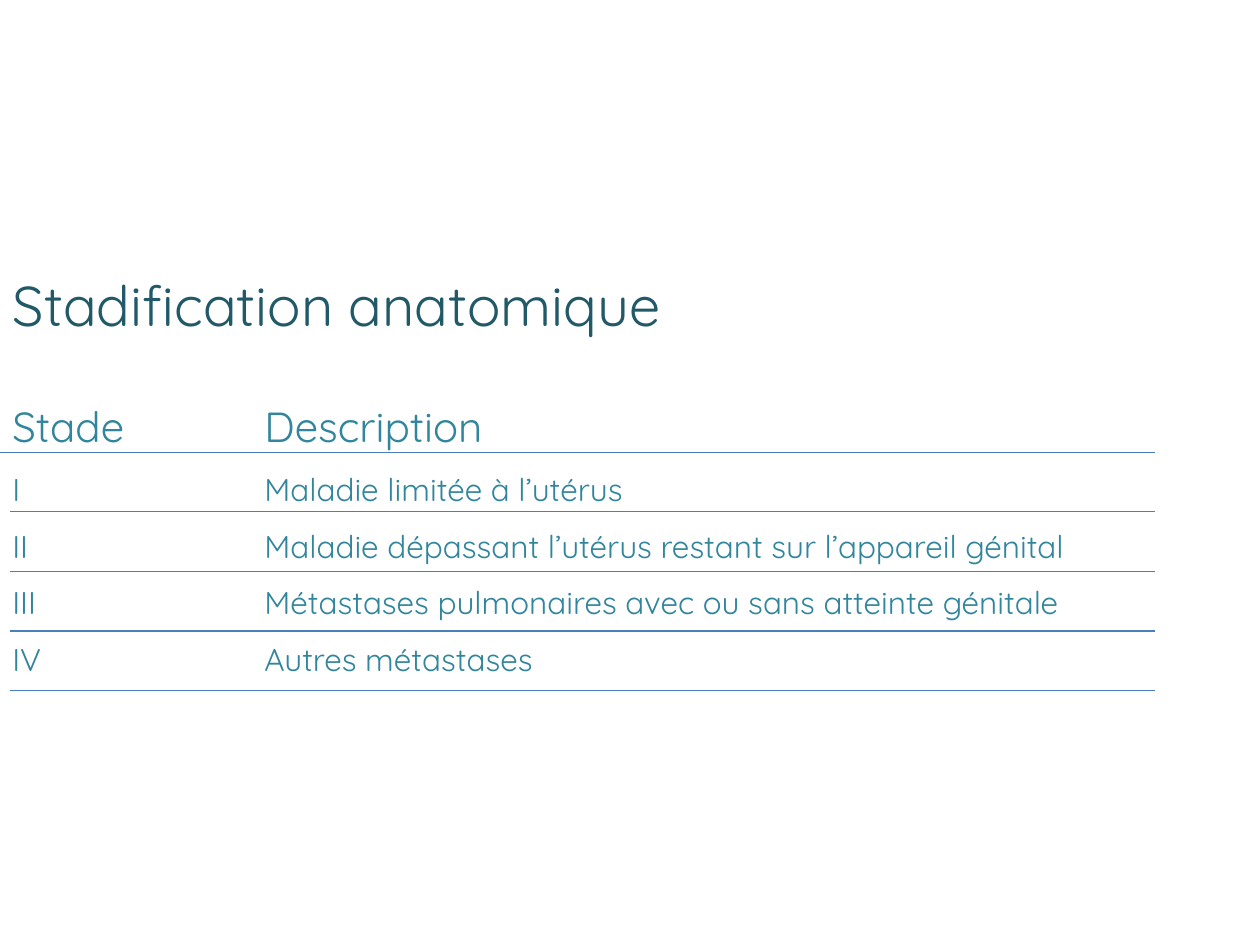
from lxml import etree
from pptx import Presentation
from pptx.dml.color import RGBColor
from pptx.enum import shapes, text
from pptx.oxml import ns
from pptx.util import Inches, Pt

DARK_TEAL = RGBColor(0x21, 0x59, 0x68)
TEAL = RGBColor(0x31, 0x85, 0x9C)
BLUE = RGBColor(0x4B, 0x7E, 0xBC)
FONT = "Quicksand"

HEADER = ("Stade", "Description")
STAGES = [
    ("I", "Maladie limitée à l’utérus"),
    ("II", "Maladie dépassant l’utérus restant sur l’appareil génital"),
    ("III", "Métastases pulmonaires avec ou sans atteinte génitale"),
    ("IV", "Autres métastases"),
]
FIRST_RULE, LAST_RULE = 3.59, 5.48


def style(p, size, color):
    p.font.name = FONT
    p.font.size = Pt(size)
    p.font.color.rgb = color


def set_title(s, title):
    sp = s.shapes.title
    sp.left, sp.top, sp.width, sp.height = Inches(0), Inches(2.1), Inches(9), Inches(0.7)
    tf = sp.text_frame
    tf.auto_size = text.MSO_AUTO_SIZE.NONE
    tf.vertical_anchor = text.MSO_ANCHOR.TOP
    p = tf.paragraphs[0]
    p.text = title
    p.alignment = text.PP_ALIGN.LEFT
    style(p, 32, DARK_TEAL)


def add_tab_stop(p, position):
    tabs = etree.SubElement(p._p.get_or_add_pPr(), ns.qn("a:tabLst"))
    etree.SubElement(tabs, ns.qn("a:tab"), pos=str(int(position)), algn="l")


def add_stages(s):
    tf = s.shapes.add_textbox(Inches(0), Inches(3.13), Inches(9), Inches(2.34)).text_frame
    tf.word_wrap = True
    for i, row in enumerate([HEADER] + STAGES):
        p = tf.add_paragraph() if i else tf.paragraphs[0]
        p.text = "\t".join(row)
        add_tab_stop(p, Inches(2))
        p.line_spacing = 1.5 if i else 1.0
        style(p, 18 if i else 24, TEAL)


def add_rule(s, left, y):
    line = s.shapes.add_connector(
        shapes.MSO_CONNECTOR.STRAIGHT, Inches(left), Inches(y), Inches(9.17), Inches(y))
    line.line.color.rgb = BLUE
    line.line.width = Pt(0.75)
    etree.SubElement(line._element.spPr, ns.qn("a:effectLst"))


def main():
    prs = Presentation()
    prs.slide_width, prs.slide_height = Inches(10), Inches(7.5)
    s = prs.slides.add_slide(prs.slide_layouts[5])
    set_title(s, "Stadification anatomique")
    add_stages(s)
    gap = (LAST_RULE - FIRST_RULE) / len(STAGES)
    for i in range(len(STAGES) + 1):
        add_rule(s, 0.08 if i else 0, FIRST_RULE + i * gap)
    prs.save("out.pptx")


if __name__ == "__main__":
    main()
